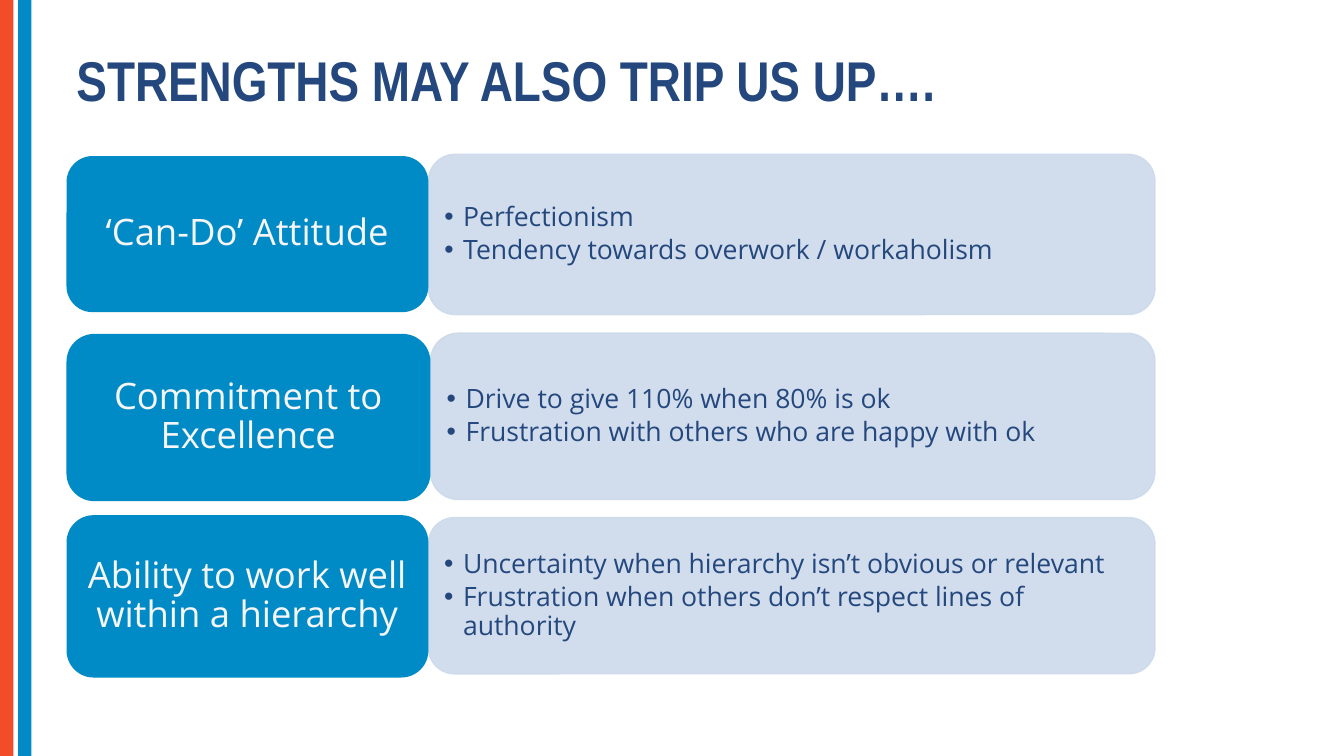
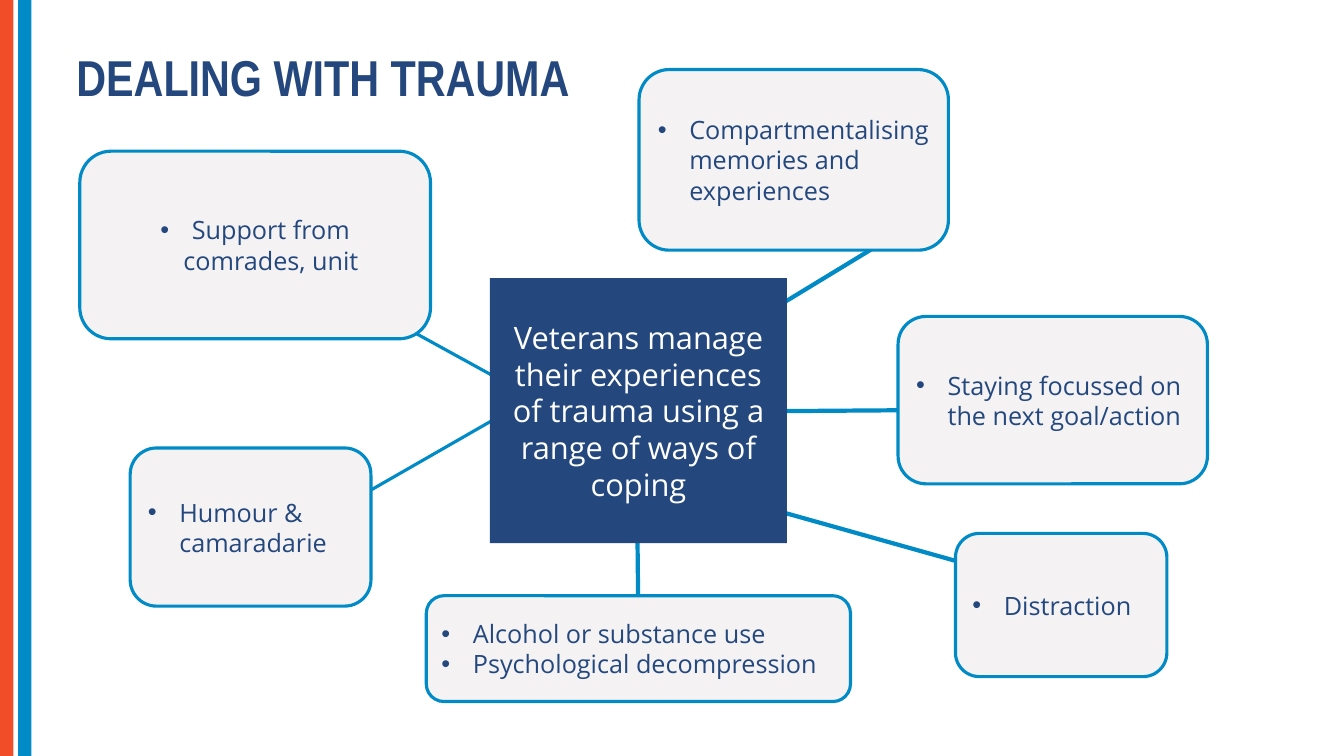
from pptx import Presentation
from pptx.dml.color import RGBColor
from pptx.enum.shapes import MSO_CONNECTOR, MSO_SHAPE
from pptx.enum.text import MSO_ANCHOR, PP_ALIGN
from pptx.oxml.ns import qn
from pptx.util import Pt
from lxml import etree

RECT, ROUNDED = MSO_SHAPE.RECTANGLE, MSO_SHAPE.ROUNDED_RECTANGLE
STRAIGHT = MSO_CONNECTOR.STRAIGHT
MIDDLE = MSO_ANCHOR.MIDDLE
LEFT, CENTER = PP_ALIGN.LEFT, PP_ALIGN.CENTER

ORANGE = RGBColor(0xF2, 0x4D, 0x29)
BLUE = RGBColor(0x00, 0x8A, 0xC6)
NAVY = RGBColor(0x24, 0x48, 0x7E)
PALE_BLUE = RGBColor(0xCC, 0xDA, 0xEA)
PALE_GREY = RGBColor(0xF4, 0xF2, 0xF2)
OFF_WHITE = RGBColor(0xF6, 0xF6, 0xF6)
WHITE = RGBColor(0xFF, 0xFF, 0xFF)
TITLE_FONT, BODY_FONT = "Arial Narrow", "Open Sans"


def add_box(slide, kind, place, fill, line=None, line_width=0):
    """Add a flat shape; place is left, top, width, height in points."""
    box = slide.shapes.add_shape(kind, *map(Pt, place))
    box.shadow.inherit = False
    box.fill.solid()
    box.fill.fore_color.rgb = fill
    if line is None:
        box.line.fill.background()
    else:
        box.line.color.rgb = line
        box.line.width = Pt(line_width)
    return box


def write(box, lines, size, color, align=LEFT, indent=0, spacing=None,
          after=0, inset=(7.2, 3.6)):
    """Fill a box with paragraphs, bulleted when there is an indent."""
    frame = box.text_frame
    frame.word_wrap = True
    frame.vertical_anchor = MIDDLE
    frame.margin_left = frame.margin_right = Pt(inset[0])
    frame.margin_top = frame.margin_bottom = Pt(inset[1])
    for number, line in enumerate(lines):
        paragraph = frame.paragraphs[0] if number == 0 else frame.add_paragraph()
        paragraph.text = line
        formats = {"alignment": align, "line_spacing": spacing,
                   "space_after": Pt(after)}
        for name, value in formats.items():
            setattr(paragraph, name, value)
        if indent:
            properties = paragraph._p.get_or_add_pPr()
            properties.set("marL", str(Pt(indent)))
            properties.set("indent", str(-Pt(indent)))
            etree.SubElement(properties, qn("a:buFont")).set("typeface", "Arial")
            etree.SubElement(properties, qn("a:buChar")).set("char", "•")
        for name, value in {"name": BODY_FONT, "size": Pt(size)}.items():
            setattr(paragraph.font, name, value)
        paragraph.font.color.rgb = color


deck = Presentation()
deck.slide_width, deck.slide_height = Pt(960), Pt(540)

# Shared frame: side bands and title
slides = []
for heading, size in [("STRENGTHS MAY ALSO TRIP US UP….", 40),
                      ("DEALING WITH TRAUMA", 36)]:
    slide = deck.slides.add_slide(deck.slide_layouts[6])
    for left, color in [(0, ORANGE), (13, BLUE)]:
        add_box(slide, RECT, (left, 0, 9.5, 540), color)
    title = slide.shapes.add_textbox(Pt(47.5), Pt(34.5), Pt(710), Pt(37.5))
    title.text_frame.word_wrap = True
    paragraph = title.text_frame.paragraphs[0]
    paragraph.text = heading
    paragraph.line_spacing = 0.9
    for name, value in {"name": TITLE_FONT, "size": Pt(size), "bold": True}.items():
        setattr(paragraph.font, name, value)
    paragraph.font.color.rgb = NAVY
    slides.append(slide)
strengths_slide, trauma_slide = slides

# Strengths: a blue card and a pale panel of pitfalls in each row
CARD_LEFT, PANEL_RIGHT = 47.5, 825
strengths = [
    # strength, card top, width, height, panel top, height, pitfalls
    ("‘Can-Do’ Attitude", 111.5, 258.5, 111.5, 110.2, 114.5,
     ["Perfectionism", "Tendency towards overwork / workaholism"]),
    ("Commitment to Excellence", 238.5, 260, 119.5, 238, 118.8,
     ["Drive to give 110% when 80% is ok",
      "Frustration with others who are happy with ok"]),
    ("Ability to work well within a hierarchy", 368, 258.5, 116, 369.7, 111.6,
     ["Uncertainty when hierarchy isn’t obvious or relevant",
      "Frustration when others don’t respect lines of authority"]),
]
for strength, top, width, height, panel_top, panel_height, pitfalls in strengths:
    panel_left = CARD_LEFT + width
    panel = add_box(strengths_slide, ROUNDED,
                    (panel_left, panel_top, PANEL_RIGHT - panel_left, panel_height),
                    PALE_BLUE, PALE_BLUE, 1)
    for color in panel._element.spPr.iter(qn("a:srgbClr")):
        etree.SubElement(color, qn("a:alpha")).set("val", "90000")
    write(panel, pitfalls, 19, NAVY, indent=13.5, spacing=0.9, after=3,
          inset=(5.8, 2.9))
    card = add_box(strengths_slide, ROUNDED, (CARD_LEFT, top, width, height), BLUE)
    write(card, [strength], 26, OFF_WHITE, CENTER, spacing=0.9, after=9,
          inset=(7.9, 3.6))

# Trauma: spokes first, so that the boxes cover their ends
spokes = [
    # x1, y1, x2, y2, width
    (550.8, 363.6, 707, 407.5, 3),
    (246.2, 210.2, 385.2, 286.6, 2.25),
    (232.6, 368.6, 384.5, 281.5, 2.25),
    (455, 350, 455.8, 425.5, 3),
    (536.4, 230.4, 656, 157.7, 3),
    (540.7, 293.8, 650.2, 293, 3),
]
for *ends, width in spokes:
    spoke = trauma_slide.shapes.add_connector(STRAIGHT, *map(Pt, ends))
    spoke.line.color.rgb = BLUE
    spoke.line.width = Pt(width)
    etree.SubElement(spoke._element.spPr, qn("a:effectLst"))

# Trauma: ways of coping around the hub
ways_of_coping = [
    # place, alignment, lines
    ((57, 108, 250.5, 134), CENTER, ["Support from comrades, unit"]),
    ((93, 320, 172, 113), LEFT, ["Humour & camaradarie"]),
    ((456.5, 49.7, 221, 129), LEFT, ["Compartmentalising memories and experiences"]),
    ((304.5, 425.5, 303, 75.6), LEFT,
     ["Alcohol or substance use", "Psychological decompression"]),
    ((641.5, 226, 221, 119.6), LEFT, ["Staying focussed on the next goal/action"]),
    ((682.5, 381, 151, 102.3), LEFT, ["Distraction"]),
]
for place, align, lines in ways_of_coping:
    way = add_box(trauma_slide, ROUNDED, place, PALE_GREY, BLUE, 2.25)
    write(way, lines, 18, NAVY, align, indent=22.5)

hub = add_box(trauma_slide, RECT, (350, 198.7, 212.2, 189.2), NAVY)
write(hub, ["Veterans manage their experiences of trauma using a range of ways of coping"],
      22, WHITE, CENTER)

deck.save("out.pptx")
